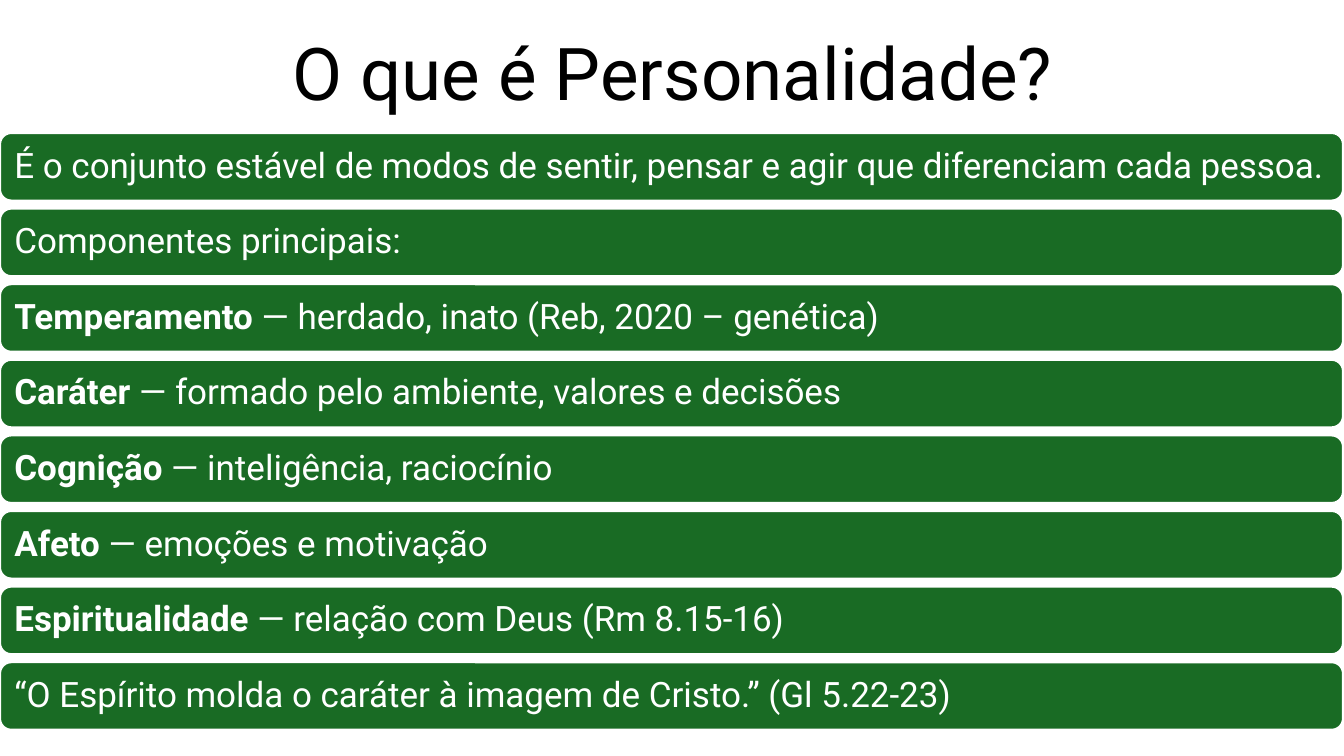
"""Build a slide that defines personality in a stack of green bars."""
from pptx import Presentation
from pptx.dml.color import RGBColor
from pptx.enum.shapes import MSO_SHAPE
from pptx.enum.text import MSO_ANCHOR, MSO_AUTO_SIZE, PP_ALIGN
from pptx.util import Inches, Pt

ROUND = MSO_SHAPE.ROUNDED_RECTANGLE
MIDDLE = MSO_ANCHOR.MIDDLE
FIXED = MSO_AUTO_SIZE.NONE
LEFT, CENTER = PP_ALIGN.LEFT, PP_ALIGN.CENTER
GREEN = RGBColor(0x19, 0x6B, 0x24)
WHITE = RGBColor(0xFF, 0xFF, 0xFF)
BLACK = RGBColor(0, 0, 0)

TITLE = "O que é Personalidade?"
BARS = [
    ("", "É o conjunto estável de modos de sentir, pensar e agir que diferenciam cada pessoa."),
    ("", "Componentes principais:"),
    ("Temperamento", " — herdado, inato (Reb, 2020 – genética)"),
    ("Caráter", " — formado pelo ambiente, valores e decisões"),
    ("Cognição", " — inteligência, raciocínio"),
    ("Afeto", " — emoções e motivação"),
    ("Espiritualidade", " — relação com Deus (Rm 8.15-16)"),
    ("", "“O Espírito molda o caráter à imagem de Cristo.” (Gl 5.22-23)"),
]
TOP, STEP = 1.32, 0.75
WIDTH, HEIGHT = 13.32, 0.67


def write(frame, text, lead="", size=25, color=WHITE, align=LEFT, font="Roboto"):
    frame.word_wrap = True
    frame.auto_size = FIXED
    frame.vertical_anchor = MIDDLE
    para = frame.paragraphs[0]
    para.alignment = align
    para.line_spacing = 0.9
    for part, bold in ((lead, True), (text, False)):
        if part:
            run = para.add_run()
            run.text = part
            run.font.name = font
            run.font.size = Pt(size)
            run.font.bold = bold
            run.font.color.rgb = color


class Deck:
    """Hold the style and the current slide."""

    def __init__(self):
        self.show = Presentation()
        self.show.slide_width = Inches(13.33)
        self.show.slide_height = Inches(7.5)
        self.slide = self.show.slides.add_slide(self.show.slide_layouts[5])

    def title(self, text):
        head = self.slide.shapes.title
        head.left, head.top = Inches(0.92), Inches(0.14)
        head.width, head.height = Inches(11.5), Inches(1.24)
        write(head.text_frame, text, size=52, color=BLACK, align=CENTER)

    def bar(self, top, lead, text):
        box = self.slide.shapes.add_shape(
            ROUND, 0, Inches(top), Inches(WIDTH), Inches(HEIGHT))
        box.shadow.inherit = False
        box.fill.solid()
        box.fill.fore_color.rgb = GREEN
        box.line.color.rgb = WHITE
        box.line.width = Pt(1.5)
        frame = box.text_frame
        frame.margin_left = frame.margin_right = Inches(0.11)
        write(frame, text, lead=lead)


def main():
    deck = Deck()
    deck.title(TITLE)
    for row, (lead, text) in enumerate(BARS):
        deck.bar(TOP + row * STEP, lead, text)
    deck.show.save("out.pptx")


if __name__ == "__main__":
    main()
